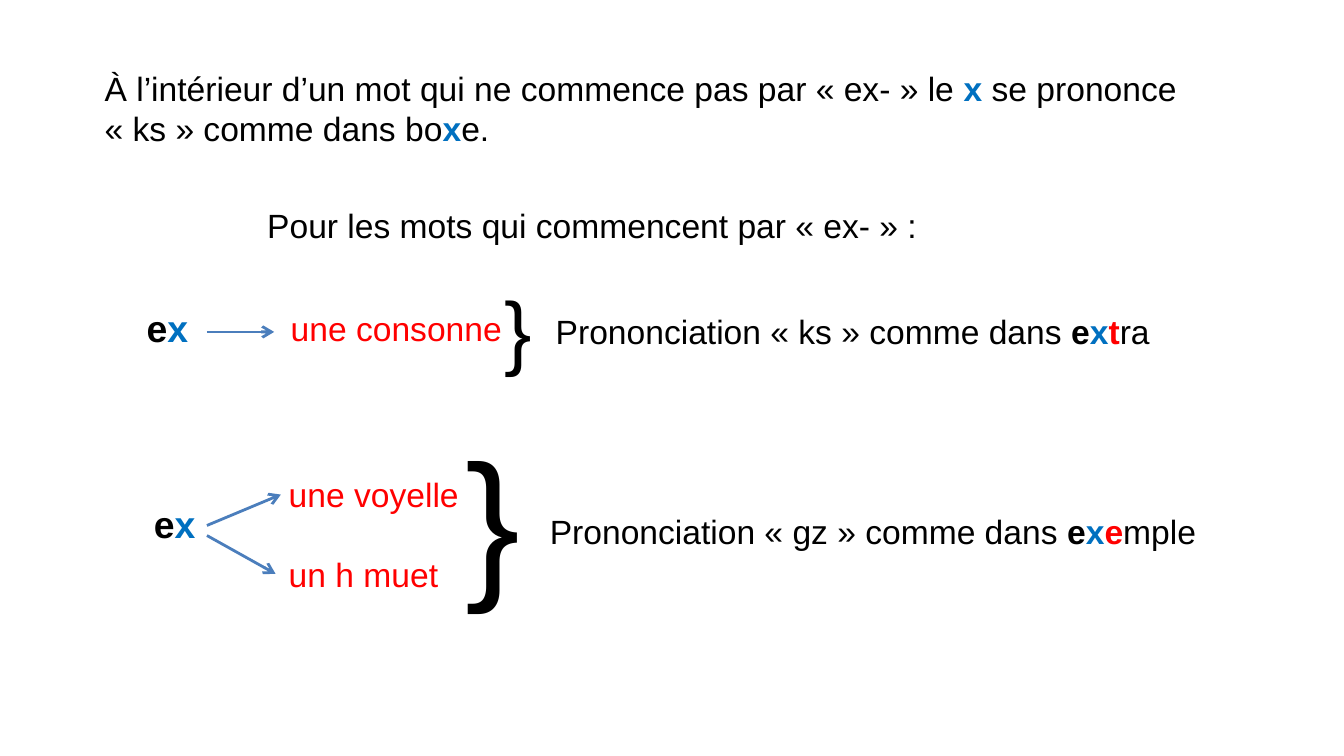
from pptx import Presentation
from pptx.dml.color import RGBColor
from pptx.enum.shapes import MSO_CONNECTOR
from pptx.enum.text import MSO_AUTO_SIZE, PP_ALIGN
from pptx.oxml.ns import qn
from pptx.util import Pt
from lxml.etree import SubElement

PX = 4572  # 200 px to the inch
BLACK = RGBColor(0x00, 0x00, 0x00)
BLUE = RGBColor(0x00, 0x70, 0xC0)
RED = RGBColor(0xFF, 0x00, 0x00)
ARROW = RGBColor(0x4B, 0x7E, 0xBC)
LEFT, CENTER = PP_ALIGN.LEFT, PP_ALIGN.CENTER


# Runs are (text, colour, bold)
def plain(text, color=BLACK):
    return (text, color, False)


def bold(text, color=BLACK):
    return (text, color, True)


X = bold("x", BLUE)
EX = [bold("e"), X]
RULE = [plain("À l’intérieur d’un mot qui ne commence pas par « ex- » le "), X,
        plain(" se prononce « ks » comme dans bo"), X, plain("e.")]
INTRO = [plain("Pour les mots qui commencent par « ex- » :")]


def sound(name, letter, ending):
    return [plain(f"Prononciation « {name} » comme dans "), *EX,
            bold(letter, RED), plain(ending)]


# (left, top, width, height), runs, size, alignment, wrap
TEXTS = [
    ((136, 91, 1670, 142), RULE, 18, LEFT, True),
    ((378, 295, 1186, 80), INTRO, 18, LEFT, True),
    # Before a consonant
    ((198, 444, 102, 88), EX, 20, CENTER, False),
    ((413, 448, 372, 80), [plain("une consonne", RED)], 18, LEFT, False),
    ((731, 405, 82, 168), [plain("}")], 44, LEFT, False),
    ((789, 453, 960, 80), sound("ks", "t", "ra"), 18, CENTER, False),
    # Before a vowel or a silent h
    ((209, 736, 102, 88), EX, 20, CENTER, False),
    ((410, 696, 310, 80), [plain("une voyelle", RED)], 18, LEFT, False),
    ((410, 815, 264, 80), [plain("un h muet", RED)], 18, LEFT, False),
    ((673, 610, 122, 316), [plain("}")], 88, LEFT, False),
    ((795, 750, 1008, 80), sound("gz", "e", "mple"), 18, CENTER, False),
]

# From x, y to x, y
ARROWS = [(308, 494, 408, 494), (308, 782, 418, 736), (308, 797, 410, 854)]


def add_text(s, box, runs, size, align, wrap):
    tf = s.shapes.add_textbox(*(v * PX for v in box)).text_frame
    tf.word_wrap = wrap
    tf.auto_size = MSO_AUTO_SIZE.SHAPE_TO_FIT_TEXT
    p = tf.paragraphs[0]
    p.alignment = align
    for text, color, is_bold in runs:
        r = p.add_run()
        r.text = text
        r.font.name = "Arial"
        r.font.size = Pt(size)
        r.font.bold = is_bold
        r.font.color.rgb = color


def add_arrow(s, ends):
    line = s.shapes.add_connector(MSO_CONNECTOR.STRAIGHT, *(v * PX for v in ends))
    line.line.color.rgb = ARROW
    line.line.width = Pt(1.5)
    SubElement(line.line.fill._xPr, qn("a:tailEnd"), type="arrow")
    SubElement(line._element.spPr, qn("a:effectLst"))


prs = Presentation()
prs.slide_width, prs.slide_height = 2000 * PX, 1125 * PX
s = prs.slides.add_slide(prs.slide_layouts[6])
for item in TEXTS:
    add_text(s, *item)
for ends in ARROWS:
    add_arrow(s, ends)
prs.save("out.pptx")
